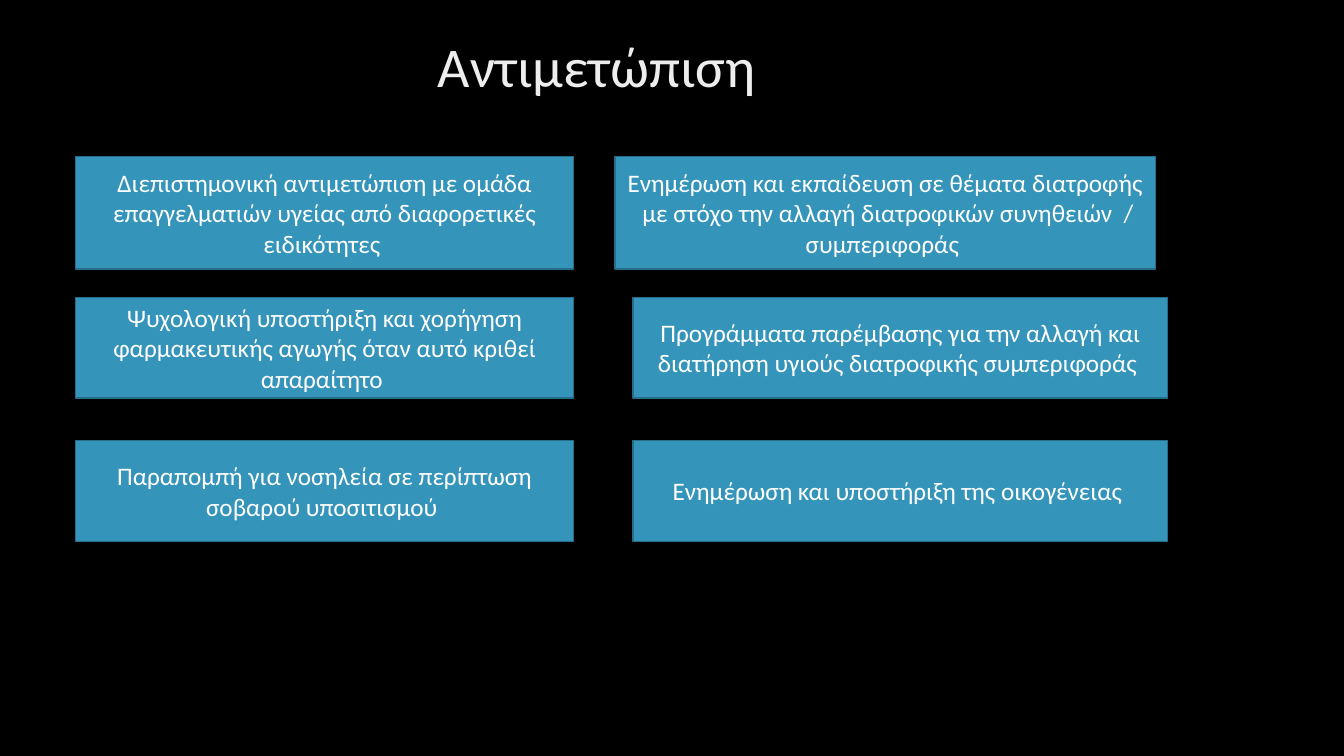
import pptx
import pptx.util
import pptx.dml.color
import pptx.enum.shapes
import pptx.enum.text

TITLE = "Αντιμετώπιση "
CARDS = [
    ("Διεπιστημονική αντιμετώπιση με ομάδα επαγγελματιών υγείας από διαφορετικές ειδικότητες ",
     "Ενημέρωση και εκπαίδευση σε θέματα διατροφής  με στόχο την αλλαγή διατροφικών συνηθειών  / συμπεριφοράς "),
    ("Ψυχολογική υποστήριξη και χορήγηση φαρμακευτικής αγωγής όταν αυτό κριθεί απαραίτητο ",
     "Προγράμματα παρέμβασης για την αλλαγή και διατήρηση υγιούς διατροφικής συμπεριφοράς "),
    ("Παραπομπή για νοσηλεία σε περίπτωση σοβαρού υποσιτισμού ",
     "Ενημέρωση και υποστήριξη της οικογένειας "),
]

SIZE = (13.33, 7.5)
HEAD = (0.23, -0.04, 11.5, 1.45)
LEFT = (0.75, 4.94)
WIDE = (6.1, 5.36)
RIGHT = (6.28, 5.3)
COLS = [(LEFT, WIDE), (LEFT, RIGHT), (LEFT, RIGHT)]
ROWS = [(1.55, 1.12), (2.95, 1), (4.37, 1)]


def color(code):
    return pptx.dml.color.RGBColor.from_string(code)


THEME = {
    "back": color("000000"),
    "fill": color("3494BA"),
    "line": color("266D8A"),
    "edge": pptx.util.Pt(1),
    "title": {"name": "Calibri", "size": pptx.util.Pt(40), "tint": color("EDEDED")},
    "card": {"name": "Calibri", "size": pptx.util.Pt(18), "tint": color("FFFFFF")},
}
FRAME = {
    "word_wrap": True,
    "auto_size": pptx.enum.text.MSO_AUTO_SIZE.NONE,
    "vertical_anchor": pptx.enum.text.MSO_ANCHOR.MIDDLE,
}


def apply(item, values):
    for key, value in values.items():
        setattr(item, key, value)


def place(shape, box):
    names = ("left", "top", "width", "height")
    apply(shape, {key: pptx.util.Inches(part) for key, part in zip(names, box)})


def write(shape, text, style, space):
    frame = shape.text_frame
    apply(frame, FRAME)
    para = frame.paragraphs[0]
    apply(para, {"alignment": pptx.enum.text.PP_ALIGN.CENTER, "line_spacing": space})
    run = para.add_run()
    run.text = text
    apply(run.font, {key: style[key] for key in ("name", "size")})
    run.font.color.rgb = style["tint"]


def paint(fill, tint):
    fill.solid()
    fill.fore_color.rgb = tint


def card(slide, text, box):
    spot = [pptx.util.Inches(part) for part in box]
    shape = slide.shapes.add_shape(pptx.enum.shapes.MSO_SHAPE.RECTANGLE, *spot)
    shape.shadow.inherit = False
    paint(shape.fill, THEME["fill"])
    paint(shape.line.fill, THEME["line"])
    shape.line.width = THEME["edge"]
    write(shape, text, THEME["card"], 1.0)


def main():
    deck = pptx.Presentation()
    deck.slide_width, deck.slide_height = map(pptx.util.Inches, SIZE)
    slide = deck.slides.add_slide(deck.slide_layouts.get_by_name("Title Only"))
    paint(slide.background.fill, THEME["back"])
    place(slide.shapes.title, HEAD)
    write(slide.shapes.title, TITLE, THEME["title"], 0.9)
    for texts, cols, (top, height) in zip(CARDS, COLS, ROWS):
        for text, (left, width) in zip(texts, cols):
            card(slide, text, (left, top, width, height))
    deck.save("out.pptx")


if __name__ == "__main__":
    main()
